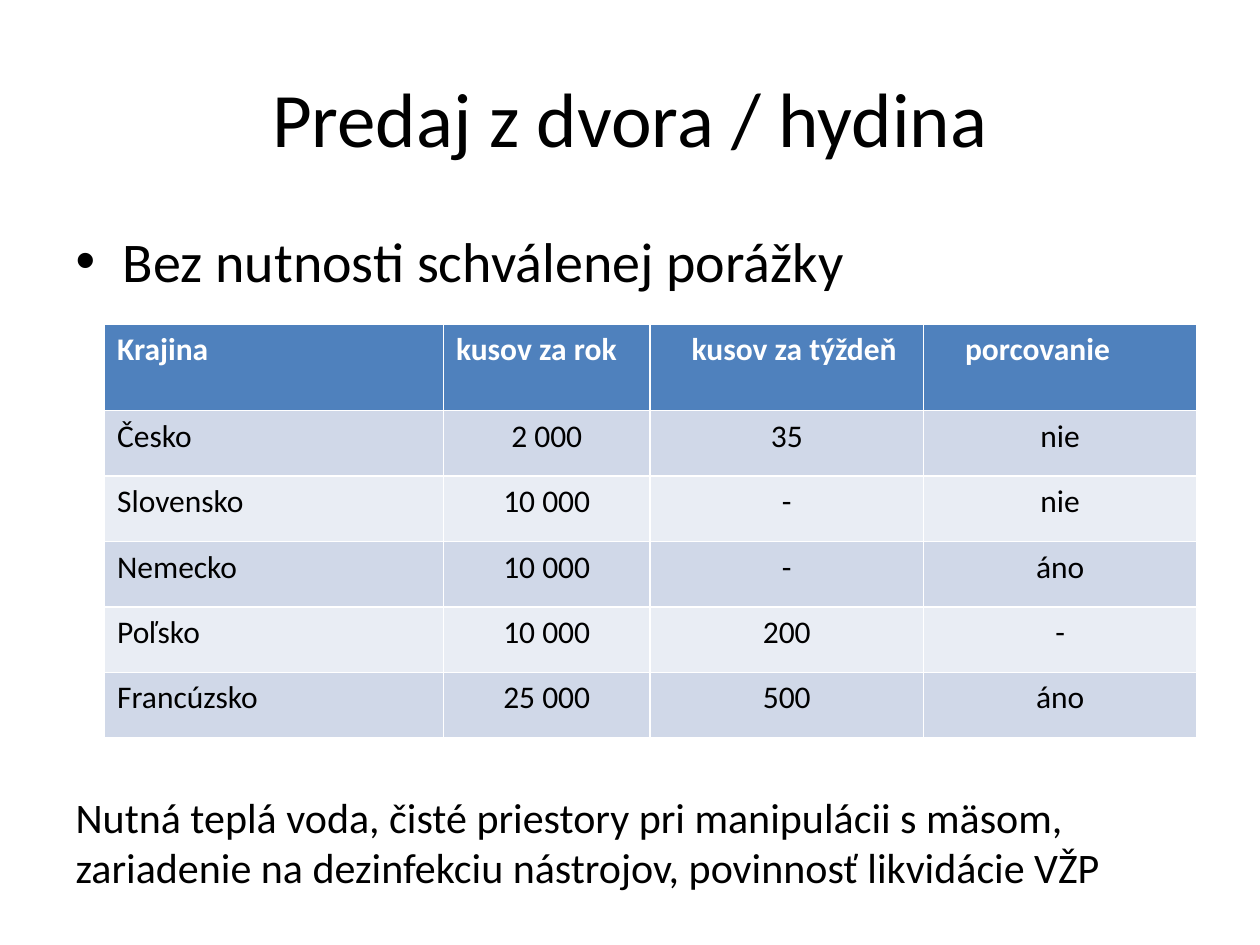
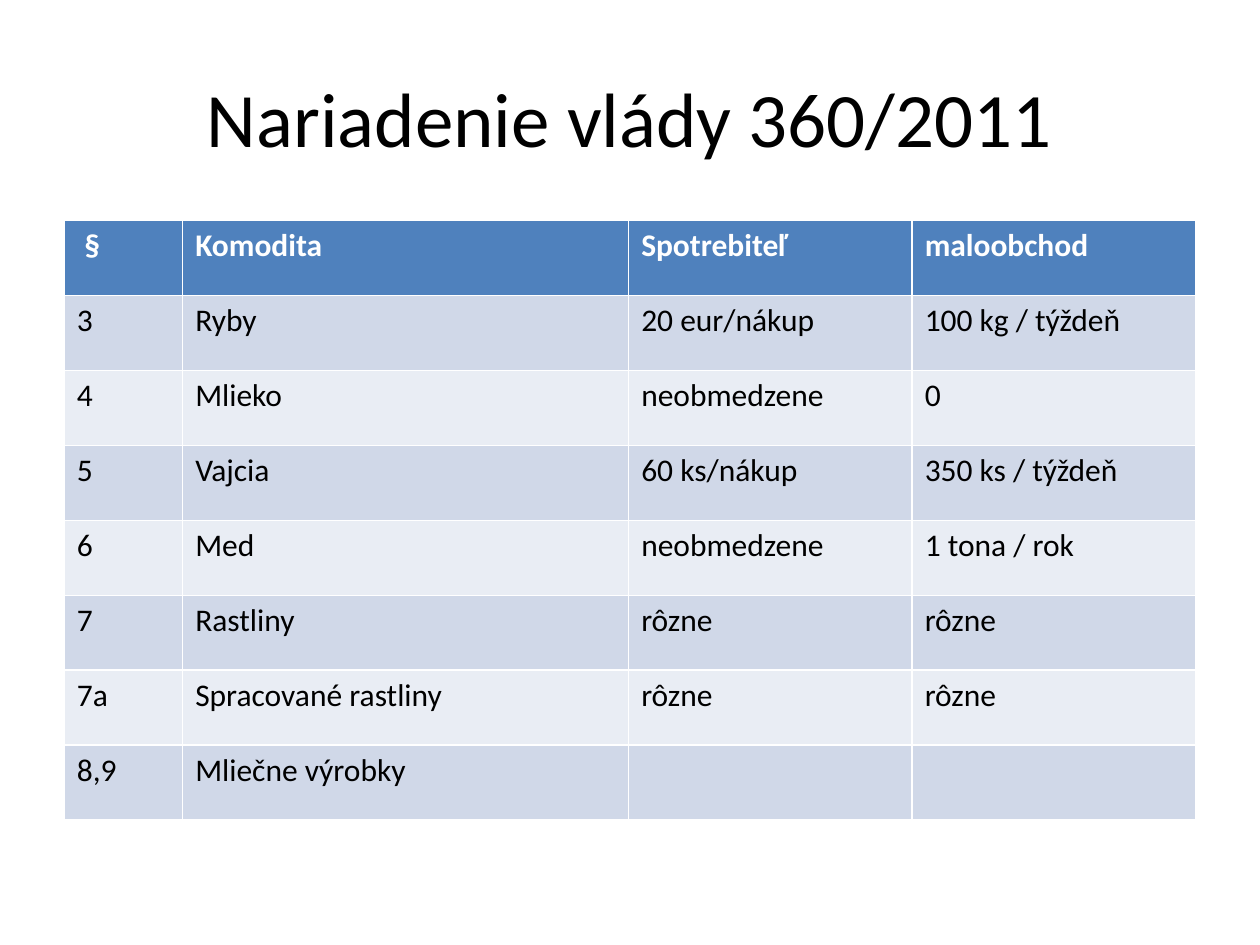
from pptx import Presentation
from pptx.dml.color import RGBColor
from pptx.enum.text import MSO_ANCHOR, MSO_AUTO_SIZE, PP_ALIGN
from pptx.oxml.ns import qn
from pptx.util import Inches, Pt

FONT = "Calibri"
HUES = {"text": "000000", "head": "4F81BD", "light": "FFFFFF",
        "odd": "D0D8E8", "even": "E9EDF4"}


def put(para, text, size=18, hue="text", bold=False, align=PP_ALIGN.LEFT):
    para.alignment = align
    if text:
        run = para.add_run()
        run.text = text
        run.font.name = FONT
        run.font.size = Pt(size)
        run.font.bold = bold
        run.font.color.rgb = RGBColor.from_string(HUES[hue])


def grid(slide, left, top, widths, heights, rows, aligns, indents):
    """Add a banded table; indents are extra left margins in the header row."""
    table = slide.shapes.add_table(
        len(rows), len(widths), Inches(left), Inches(top),
        Inches(sum(widths)), Inches(sum(heights))).table
    for col, width in zip(table.columns, widths):
        col.width = Inches(width)
    for r, (row, height) in enumerate(zip(rows, heights)):
        table.rows[r].height = Inches(height)
        fill = "head" if r == 0 else ("even", "odd")[r % 2]
        for c, text in enumerate(row):
            cell = table.cell(r, c)
            cell.fill.solid()
            cell.fill.fore_color.rgb = RGBColor.from_string(HUES[fill])
            para = cell.text_frame.paragraphs[0]
            if r == 0:
                cell.margin_left = Inches(0.1 + indents[c])
                put(para, text, hue="light", bold=True)
            else:
                put(para, text, align=aligns[c])


deck = Presentation()
deck.slide_width, deck.slide_height = Inches(10), Inches(7.5)

# Slides with their shared title style
slides = []
for layout, title in ((1, "Predaj z dvora / hydina"),
                      (5, "Nariadenie vlády 360/2011")):
    slide = deck.slides.add_slide(deck.slide_layouts[layout])
    head = slide.shapes.title
    head.left, head.top = Inches(0.5), Inches(0.3)
    head.width, head.height = Inches(9), Inches(1.25)
    head.text_frame.vertical_anchor = MSO_ANCHOR.MIDDLE
    put(head.text_frame.paragraphs[0], title, size=44, align=PP_ALIGN.CENTER)
    slides.append(slide)
farm, decree = slides

# Farm sales: a bullet above the table and a note below it
body = farm.placeholders[1]
body.left, body.top = Inches(0.5), Inches(1.75)
body.width, body.height = Inches(9), Inches(5.75)
frame = body.text_frame
frame.auto_size = MSO_AUTO_SIZE.NONE
put(frame.paragraphs[0], "Bez nutnosti schválenej porážky", size=32)
note = frame.add_paragraph()
put(note, "Nutná teplá voda, čisté priestory pri manipulácii s mäsom, "
    "zariadenie na dezinfekciu nástrojov, povinnosť likvidácie VŽP", size=24)
note.space_before = Pt(284)
props = note._p.get_or_add_pPr()
props.set("marL", "0")
props.set("indent", "0")
props.append(props.makeelement(qn("a:buNone"), {}))

sales = [
    ("Krajina", "kusov za rok", "kusov za týždeň", "porcovanie"),
    ("Česko", "2 000", "35", "nie"),
    ("Slovensko", "10 000", "-", "nie"),
    ("Nemecko", "10 000", "-", "áno"),
    ("Poľsko", "10 000", "200", "-"),
    ("Francúzsko", "25 000", "500", "áno"),
]
grid(farm, 0.83, 2.57, [2.69, 1.64, 2.17, 2.17], [0.69] + [0.52] * 5, sales,
     [PP_ALIGN.LEFT] + [PP_ALIGN.CENTER] * 3, [0, 0, 0.23, 0.23])

# Government decree: limits by commodity
limits = [
    ("§", "Komodita", "Spotrebiteľ", "maloobchod"),
    ("3", "Ryby", "20 eur/nákup", "100 kg / týždeň"),
    ("4", "Mlieko", "neobmedzene", "0"),
    ("5", "Vajcia", "60 ks/nákup", "350 ks / týždeň"),
    ("6", "Med", "neobmedzene", "1 tona / rok"),
    ("7", "Rastliny", "rôzne", "rôzne"),
    ("7a", "Spracované rastliny", "rôzne", "rôzne"),
    ("8,9", "Mliečne výrobky", "", ""),
]
grid(decree, 0.51, 1.75, [0.94, 3.54, 2.25, 2.25], [0.595] * 8, limits,
     [PP_ALIGN.LEFT] * 4, [0.06, 0, 0, 0])

deck.save("out.pptx")
